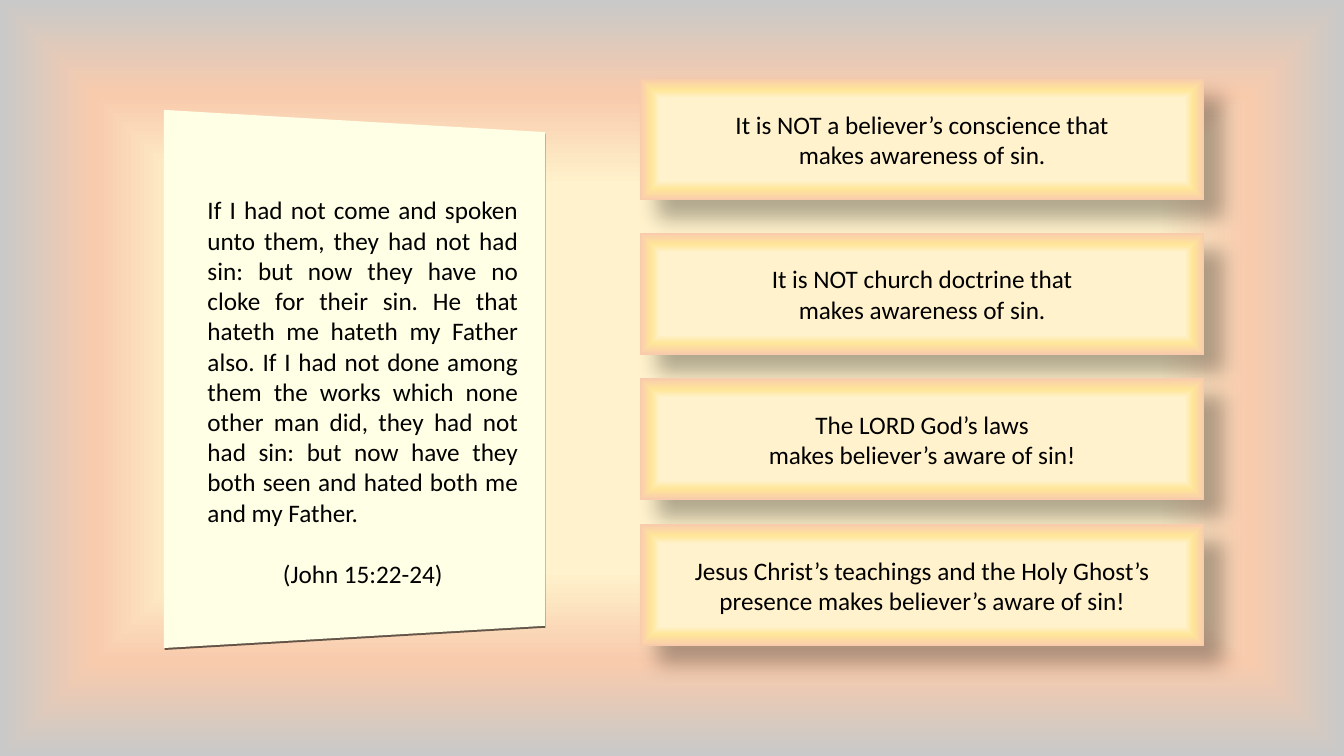
from lxml import etree
from pptx import Presentation
from pptx.dml.color import RGBColor
from pptx.enum.shapes import MSO_SHAPE as Shape
from pptx.enum.text import MSO_ANCHOR as Anchor, PP_ALIGN as Align
from pptx.oxml import parse_xml
from pptx.oxml.ns import nsdecls, qn
from pptx.util import Cm, Pt

# Content
VERSE = (
    "If I had not come and spoken unto them, they had not had sin: but now "
    "they have no cloke for their sin. He that hateth me hateth my Father also. "
    "If I had not done among them the works which none other man did, they had "
    "not had sin: but now have they both seen and hated both me and my Father."
)
REFERENCE = "(John 15:22-24)"
STATEMENTS = [  # top in cm, paragraphs
    (1.98, ["It is NOT a believer’s conscience that", "makes awareness of sin."]),
    (5.87, ["It is NOT church doctrine that", "makes awareness of sin."]),
    (9.53, ["The LORD God’s laws", "makes believer’s aware of sin!"]),
    (13.21, ["Jesus Christ’s teachings and the Holy Ghost’s presence "
             "makes believer’s aware of sin!"]),
]

# Style
COLORS = {"cream": "FFF2CC", "gold": "FFE699", "peach": "F8CBAD",
          "grey": "C9C9C9", "panel": "FFFFE6", "black": "000000"}
BACKGROUND_STOPS = [(51, "cream"), (75, "peach"), (100, "grey")]
BOX_STOPS = [(68, "cream"), (81, "gold"), (100, "peach")]
FONT, SIZE = "Calibri", Pt(18)

# Layout in cm
PANEL_CORNERS = [(4.13, 2.77), (13.73, 3.33), (13.73, 15.77), (4.13, 16.33)]
VERSE_FRAME = (4.98, 4.78, 8.33, 10.26)
BOX_LEFT, BOX_WIDTH, BOX_HEIGHT = 16.13, 14.22, 3.07


def set_gradient(fill, properties, stops):
    """Swap a solid fill for a rectangular gradient around the centre."""
    fill.solid()
    stop_xml = "".join(
        f'<a:gs pos="{position * 1000}"><a:srgbClr val="{COLORS[name]}"/></a:gs>'
        for position, name in stops)
    gradient = parse_xml(
        f'<a:gradFill {nsdecls("a")} rotWithShape="1"><a:gsLst>{stop_xml}</a:gsLst>'
        '<a:path path="rect"><a:fillToRect l="50000" t="50000" r="50000" b="50000"/>'
        '</a:path></a:gradFill>')
    solid = properties.find(qn("a:solidFill"))
    properties.replace(solid, gradient)


def set_shadow(shape, opacity, blur, distance, angle):
    shape.shadow.inherit = False
    effects = shape.element.spPr.find(qn("a:effectLst"))
    shadow = etree.SubElement(
        effects, qn("a:outerShdw"), blurRad=str(Pt(blur)), dist=str(Pt(distance)),
        dir=str(angle * 60000), algn="tl", rotWithShape="0")
    color = etree.SubElement(shadow, qn("a:srgbClr"), val=COLORS["black"])
    etree.SubElement(color, qn("a:alpha"), val=str(opacity * 1000))


def write(text_frame, lines, alignments):
    text_frame.word_wrap = True
    text_frame.text = "\n".join(lines)
    for paragraph, alignment in zip(text_frame.paragraphs, alignments):
        paragraph.alignment = alignment
        for run in paragraph.runs:
            run.font.name, run.font.size = FONT, SIZE
            run.font.color.rgb = RGBColor.from_string(COLORS["black"])


def add_verse_panel(slide):
    corners = [(Cm(x), Cm(y)) for x, y in PANEL_CORNERS]
    builder = slide.shapes.build_freeform(*corners[0])
    builder.add_line_segments(corners[1:], close=True)
    panel = builder.convert_to_shape()
    panel.fill.solid()
    panel.fill.fore_color.rgb = RGBColor.from_string(COLORS["panel"])
    panel.line.fill.background()
    set_shadow(panel, 60, 0, 1.5, 70)

    text_box = slide.shapes.add_textbox(*map(Cm, VERSE_FRAME))
    write(text_box.text_frame, [VERSE, REFERENCE], [Align.JUSTIFY, Align.CENTER])
    text_box.text_frame.paragraphs[1].space_before = Pt(22)


def add_statement(slide, top, lines):
    box = slide.shapes.add_shape(
        Shape.RECTANGLE, Cm(BOX_LEFT), Cm(top), Cm(BOX_WIDTH), Cm(BOX_HEIGHT))
    set_gradient(box.fill, box.element.spPr, BOX_STOPS)
    box.line.fill.background()
    set_shadow(box, 30, 15, 18, 45)
    box.text_frame.vertical_anchor = Anchor.MIDDLE
    write(box.text_frame, lines, [Align.CENTER] * len(lines))


def main():
    presentation = Presentation()
    presentation.slide_width, presentation.slide_height = Cm(33.87), Cm(19.05)
    slide = presentation.slides.add_slide(presentation.slide_layouts[6])

    # Background
    background_fill = slide.background.fill
    background_fill.solid()
    background = slide.element.xpath("p:cSld/p:bg/p:bgPr")[0]
    set_gradient(background_fill, background, BACKGROUND_STOPS)

    # Verse on the left, statements on the right
    add_verse_panel(slide)
    for top, lines in STATEMENTS:
        add_statement(slide, top, lines)

    presentation.save("out.pptx")


if __name__ == "__main__":
    main()
